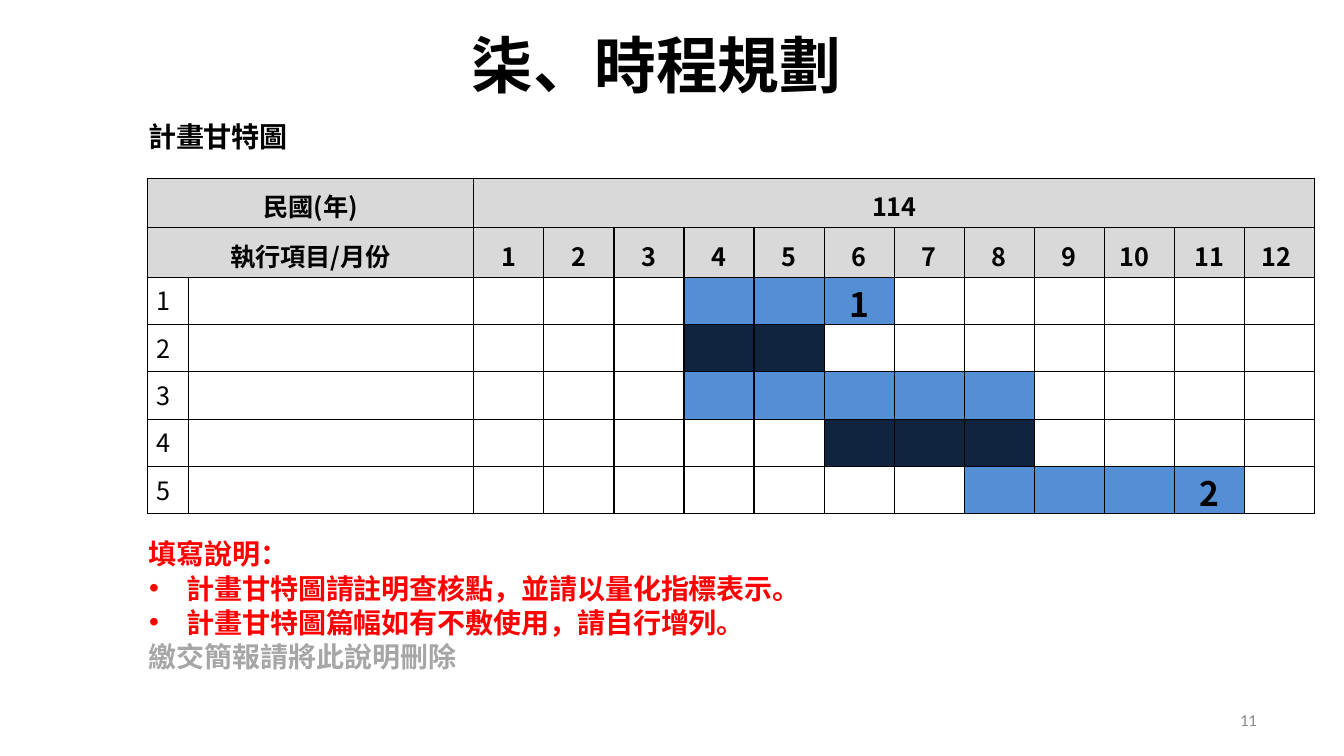
from lxml import etree
from pptx import Presentation
from pptx import util as u
from pptx.dml.color import RGBColor
from pptx.enum import text
from pptx.oxml import ns

BLACK = RGBColor(0x00, 0x00, 0x00)
GREY = RGBColor(0x88, 0x88, 0x88)
PALE_GREY = RGBColor(0xA6, 0xA6, 0xA6)
RED = RGBColor(0xFF, 0x00, 0x00)
HEADER_FILL = RGBColor(0xD9, 0xD9, 0xD9)
BLUE = RGBColor(0x54, 0x8E, 0xD4)
NAVY = RGBColor(0x10, 0x24, 0x3E)

CJK = "Noto Sans CJK SC"
LATIN = "Calibri"
CENTER = text.PP_ALIGN.CENTER

# Each task: bar colour, first month, last month, checkpoint at the last month
TASKS = [
    (BLUE, 4, 6, "1"),
    (NAVY, 4, 5, ""),
    (BLUE, 4, 8, ""),
    (NAVY, 6, 8, ""),
    (BLUE, 8, 11, "2"),
]
MONTHS = 12


def add_xml(parent, tag, **attributes):
    return etree.SubElement(parent, ns.qn(tag), **attributes)


class SlideBuilder:
    def __init__(self, slide):
        self.slide = slide

    def add_run(self, paragraph, words, size, color=BLACK, bold=True, font=CJK, spacing=0):
        """Append one run; spacing is the letter spacing in points."""
        run = paragraph.add_run()
        run.text = words
        run.font.size = u.Pt(size)
        run.font.bold = bold
        run.font.color.rgb = color
        run.font.name = font
        properties = run.font._element
        properties.set("spc", str(round(spacing * 100)))
        add_xml(properties, "a:ea", typeface=CJK)

    def format_paragraph(self, paragraph, before=0, left=0.01, hanging=0, bullet=None,
                         tab=None, line=None, align=text.PP_ALIGN.LEFT):
        paragraph.alignment = align
        paragraph.space_before = u.Pt(before)
        paragraph.line_spacing = line
        properties = paragraph._p.get_or_add_pPr()
        properties.set("marL", str(u.Inches(left)))
        properties.set("indent", str(u.Inches(-hanging)))
        if bullet:
            add_xml(properties, "a:buFont", typeface="Arial")
            add_xml(properties, "a:buChar", char=bullet)
        else:
            add_xml(properties, "a:buNone")
        if tab:
            stops = add_xml(properties, "a:tabLst")
            add_xml(stops, "a:tab", pos=str(u.Inches(tab)), algn="l")

    def prepare_frame(self, shape, left, top, width, height, inset_top=0.01):
        """Place a text shape and return its frame with tight insets."""
        shape.left, shape.top = u.Inches(left), u.Inches(top)
        shape.width, shape.height = u.Inches(width), u.Inches(height)
        frame = shape.text_frame
        frame.margin_left = frame.margin_right = frame.margin_bottom = 0
        frame.margin_top = u.Inches(inset_top)
        frame.word_wrap = True
        frame.vertical_anchor = text.MSO_ANCHOR.TOP
        frame.auto_size = text.MSO_AUTO_SIZE.SHAPE_TO_FIT_TEXT
        return frame

    def title(self, words):
        frame = self.prepare_frame(self.slide.shapes.title, 4.67, 0.26, 8.25, 0.75)
        self.format_paragraph(frame.paragraphs[0])
        self.add_run(frame.paragraphs[0], words, 44, spacing=-0.1)

    def label(self, words, box, size, inset_top=0.01, line=None, **style):
        holder = self.slide.shapes.add_textbox(0, 0, 0, 0)
        frame = self.prepare_frame(holder, *box, inset_top=inset_top)
        self.format_paragraph(frame.paragraphs[0], line=line)
        self.add_run(frame.paragraphs[0], words, size, **style)

    def instructions(self, heading, points, reminder):
        frame = self.prepare_frame(self.slide.placeholders[1], 1.46, 5.31, 8.65, 1.37)
        intro = frame.paragraphs[0]
        self.format_paragraph(intro, tab=0.39)
        self.add_run(intro, heading, 20, RED, font=LATIN)
        for before, point in zip((1, 0.2), points):
            item = frame.add_paragraph()
            self.format_paragraph(item, before, left=0.39, hanging=0.37, bullet="•", tab=0.39)
            self.add_run(item, point, 20, RED, spacing=-0.1)
        closing = frame.add_paragraph()
        self.format_paragraph(closing, 0.2, tab=0.39)
        self.add_run(closing, reminder, 20, PALE_GREY, font=LATIN)

    def style_cell(self, cell, fill=None):
        """Clear the insets, set the fill and draw thin black borders."""
        cell.margin_left = cell.margin_right = cell.margin_top = cell.margin_bottom = 0
        if fill is None:
            cell.fill.background()
        else:
            cell.fill.solid()
            cell.fill.fore_color.rgb = fill
        properties = cell._tc.get_or_add_tcPr()
        for position, side in enumerate(("a:lnL", "a:lnR", "a:lnT", "a:lnB")):
            border = add_xml(properties, side, w=str(u.Pt(1)))
            add_xml(add_xml(border, "a:solidFill"), "a:srgbClr", val=str(BLACK))
            properties.insert(position, border)

    def cell_text(self, cell, words, size=18, inset_top=0.09, bold=True, spacing=0, **layout):
        cell.margin_top = u.Inches(inset_top)
        paragraph = cell.text_frame.paragraphs[0]
        self.format_paragraph(paragraph, **layout)
        self.add_run(paragraph, words, size, bold=bold, spacing=spacing)

    def gantt(self, year):
        left, top, width, height = (u.Inches(n) for n in (1.46, 1.77, 11.58, 3.32))
        rows = 2 + len(TASKS)
        table = self.slide.shapes.add_table(rows, 2 + MONTHS, left, top, width, height).table
        table.first_row = table.horz_banding = False
        number_width, item_width = u.Inches(0.41), u.Inches(2.83)
        month_width = (width - number_width - item_width) // MONTHS
        for column, size in zip(table.columns, [number_width, item_width] + [month_width] * MONTHS):
            column.width = size
        for index, row in enumerate(table.rows):
            row.height = u.Inches(0.49 if index < 2 else 0.47)
            for column, cell in enumerate(row.cells):
                fill = HEADER_FILL if index < 2 else None
                if index >= 2:
                    color, start, end, _ = TASKS[index - 2]
                    fill = color if start <= column - 1 <= end else None
                self.style_cell(cell, fill)

        header = {"before": 6.2, "left": 0, "align": CENTER}
        table.cell(0, 0).merge(table.cell(0, 1))
        table.cell(0, 2).merge(table.cell(0, 1 + MONTHS))
        table.cell(1, 0).merge(table.cell(1, 1))
        self.cell_text(table.cell(0, 0), "民國(年)", spacing=-0.1, **header)
        self.cell_text(table.cell(0, 2), year, spacing=-0.2, **header)
        self.cell_text(table.cell(1, 0), "執行項目/月份", spacing=-0.1, **header)
        indents = {10: 0.15, 12: 0.17}
        for month in range(1, MONTHS + 1):
            layout = {"before": 6.2, "left": indents[month]} if month in indents else header
            self.cell_text(table.cell(1, month + 1), str(month),
                           spacing=-0.5 if month < 10 else -0.2, **layout)

        for number, (_, _, end, checkpoint) in enumerate(TASKS, 1):
            number_cell = table.cell(number + 1, 0)
            number_cell.vertical_anchor = text.MSO_ANCHOR.MIDDLE
            self.cell_text(number_cell, str(number), inset_top=0, bold=False, left=0.09, line=0.9)
            if checkpoint:
                self.cell_text(table.cell(number + 1, end + 1), checkpoint, 24, 0.01,
                               spacing=-0.5, before=1.1, left=0, align=CENTER)


def main():
    deck = Presentation()
    deck.slide_width, deck.slide_height = u.Inches(13.33), u.Inches(7.5)
    schedule = SlideBuilder(deck.slides.add_slide(deck.slide_layouts[1]))
    schedule.label("11", (12.29, 7.07, 0.32, 0.17), 12, inset_top=0, line=u.Pt(12.4),
                   color=GREY, bold=False, font=LATIN, spacing=-0.2)
    schedule.title("柒、時程規劃")
    schedule.label("計畫甘特圖", (1.46, 1.18, 1.98, 0.36), 20, spacing=-0.1)
    schedule.gantt("114")
    schedule.instructions(
        "填寫說明：",
        ["計畫甘特圖請註明查核點，並請以量化指標表示。",
         "計畫甘特圖篇幅如有不敷使用，請自行增列。"],
        "繳交簡報請將此說明刪除",
    )
    deck.save("out.pptx")


if __name__ == "__main__":
    main()
